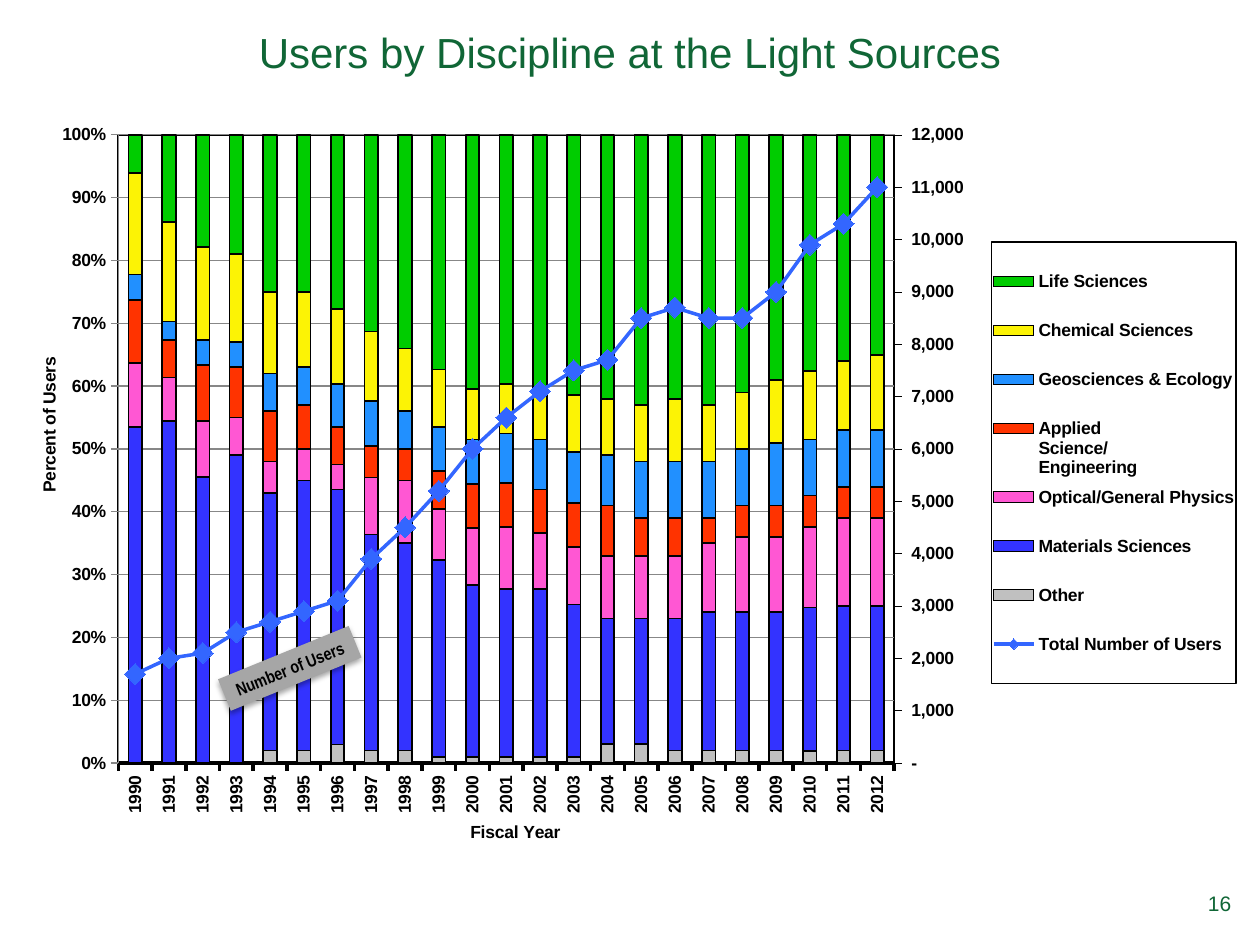
import pptx
import pptx.chart.axis
import pptx.chart.data
import pptx.dml.color
import pptx.enum.chart
import pptx.enum.dml
import pptx.enum.shapes
import pptx.enum.text
import pptx.oxml
import pptx.oxml.ns
import pptx.util

Inches = pptx.util.Inches
Pt = pptx.util.Pt
qn = pptx.oxml.ns.qn
NAMESPACES = pptx.oxml.ns.nsdecls("c", "a")
GREEN, BLACK, BLUE = "106636", "000000", "3366FF"

YEARS = [str(year) for year in range(1990, 2013)]
DISCIPLINES = [
    ("Other", "C0C0C0",
     [0, 0, 0, 0, 2, 2, 3, 2, 2, 1, 1, 1, 1, 1, 3, 3, 2, 2, 2, 2, 2, 2, 2]),
    ("Materials Sciences", "3333FF",
     [53, 55, 46, 49, 41, 43, 41, 34, 33, 31, 27, 27, 27, 24, 20, 20, 21, 22, 22, 22, 23, 23, 23]),
    ("Optical/General Physics", "FF57D3",
     [10, 7, 9, 6, 5, 5, 4, 9, 10, 8, 9, 10, 9, 9, 10, 10, 10, 11, 12, 12, 13, 14, 14]),
    ("Applied Science/Engineering", "FF3300",
     [10, 6, 9, 8, 8, 7, 6, 5, 5, 6, 7, 7, 7, 7, 8, 6, 6, 4, 5, 5, 5, 5, 5]),
    ("Geosciences & Ecology", "2190FF",
     [4, 3, 4, 4, 6, 6, 7, 7, 6, 7, 7, 8, 8, 8, 8, 9, 9, 9, 9, 10, 9, 9, 9]),
    ("Chemical Sciences", "FCF305",
     [16, 16, 15, 14, 13, 12, 12, 11, 10, 9, 8, 8, 8, 9, 9, 9, 10, 9, 9, 10, 11, 11, 12]),
    ("Life Sciences", "00CC00",
     [6, 14, 18, 19, 25, 25, 28, 31, 34, 37, 40, 40, 41, 41, 42, 43, 42, 43, 41, 39, 38, 36, 35]),
]
TOTAL_USERS = [1700, 2000, 2100, 2500, 2700, 2900, 3100, 3900, 4500, 5200, 6000, 6600,
               7100, 7500, 7700, 8500, 8700, 8500, 8500, 9000, 9900, 10300, 11000]


def color(value):
    return pptx.dml.color.RGBColor.from_string(value)


def set_fill(fill, value):
    fill.solid()
    fill.fore_color.rgb = color(value)


def set_line(line, value, width):
    set_fill(line.fill, value)
    line.width = Pt(width)


def set_font(font, size, value, name="Arial", bold=False):
    font.size = Pt(size)
    font.name = name
    font.bold = bold
    font.color.rgb = color(value)


def write_text(text_frame, text, *font_settings):
    paragraph = text_frame.paragraphs[0]
    paragraph.alignment = pptx.enum.text.PP_ALIGN.CENTER
    run = paragraph.add_run()
    run.text = text
    set_font(run.font, *font_settings)


def remove_children(element, tag):
    for child in element.findall(qn(tag)):
        element.remove(child)


def set_layout(element, index, **fractions):
    remove_children(element, "c:layout")
    target = '<c:layoutTarget val="inner"/>' if element.tag == qn("c:plotArea") else ""
    modes = '<c:xMode val="edge"/><c:yMode val="edge"/>'
    sizes = "".join(f'<c:{key} val="{value}"/>' for key, value in fractions.items())
    element.insert(index, pptx.oxml.parse_xml(
        f"<c:layout {NAMESPACES}><c:manualLayout>{target}{modes}{sizes}</c:manualLayout></c:layout>"))


def framed_properties(line_width):
    return pptx.oxml.parse_xml(
        f'<c:spPr {NAMESPACES}><a:solidFill><a:srgbClr val="FFFFFF"/></a:solidFill>'
        f'<a:ln w="{Pt(line_width)}"><a:solidFill><a:srgbClr val="{BLACK}"/></a:solidFill></a:ln></c:spPr>')


def turn_upright(body):
    body.set("rot", "-5400000")
    body.set("vert", "horz")


def format_axis(axis, line_width):
    axis.major_tick_mark = pptx.enum.chart.XL_TICK_MARK.OUTSIDE
    axis.minor_tick_mark = pptx.enum.chart.XL_TICK_MARK.NONE
    set_line(axis.format.line, BLACK, line_width)
    set_font(axis.tick_labels.font, 10, BLACK, "Arial", True)


def scale_axis(axis, maximum, step, number_format):
    axis.minimum_scale, axis.maximum_scale, axis.major_unit = 0, maximum, step
    axis.tick_labels.number_format = number_format
    axis.tick_labels.number_format_is_linked = False


def add_axis_title(axis, text, x, y):
    title = axis.axis_title
    write_text(title.text_frame, text, 10, BLACK, "Arial", True)
    set_layout(title._element, 1, x=x, y=y)
    return title


def move_total_to_right_axis(chart):
    plot_area = chart._chartSpace.chart.plotArea
    bars = plot_area.find(qn("c:barChart"))
    total = bars.findall(qn("c:ser"))[-1]
    remove_children(total, "c:invertIfNegative")
    line_chart = pptx.oxml.parse_xml(
        f'<c:lineChart {NAMESPACES}><c:grouping val="standard"/><c:varyColors val="0"/>'
        '<c:marker val="1"/><c:axId val="5001"/><c:axId val="5002"/></c:lineChart>')
    line_chart.insert(2, total)
    bars.addnext(line_chart)

    def axis_xml(tag, number, other, deleted, position, crosses):
        return pptx.oxml.parse_xml(
            f'<c:{tag} {NAMESPACES}><c:axId val="{number}"/>'
            '<c:scaling><c:orientation val="minMax"/></c:scaling>'
            f'<c:delete val="{deleted}"/><c:axPos val="{position}"/>'
            '<c:tickLblPos val="nextTo"/>'
            f'<c:crossAx val="{other}"/><c:crosses val="{crosses}"/></c:{tag}>')

    right_axis = axis_xml("valAx", 5002, 5001, 0, "r", "max")
    plot_area.findall(qn("c:valAx"))[-1].addnext(right_axis)
    right_axis.addnext(axis_xml("catAx", 5001, 5002, 1, "b", "autoZero"))
    return pptx.chart.axis.ValueAxis(right_axis)


def add_users_chart(slide, left, top, width, height):
    data = pptx.chart.data.CategoryChartData()
    data.categories = YEARS
    for name, _, values in DISCIPLINES:
        data.add_series(name, values)
    data.add_series("Total Number of Users", TOTAL_USERS)
    chart = slide.shapes.add_chart(
        pptx.enum.chart.XL_CHART_TYPE.COLUMN_STACKED_100, left, top, width, height, data).chart
    chart.has_title = False
    set_font(chart.font, 10, BLACK, "Arial", True)

    right_axis = move_total_to_right_axis(chart)
    bars, lines = chart.plots
    bars.gap_width, bars.overlap, bars.vary_by_categories = 150, 100, False
    for series, (_, fill, _) in zip(bars.series, DISCIPLINES):
        set_fill(series.format.fill, fill)
        set_line(series.format.line, BLACK, 1)
    total = lines.series[0]
    total.smooth = False
    set_line(total.format.line, BLUE, 2)
    total.marker.style = pptx.enum.chart.XL_MARKER_STYLE.DIAMOND
    total.marker.size = 12
    set_fill(total.marker.format.fill, BLUE)
    set_line(total.marker.format.line, BLUE, 0.75)

    year_axis, percent_axis = chart.category_axis, chart.value_axis
    for axis, line_width in ((year_axis, 2), (percent_axis, 0.25), (right_axis, 0.25)):
        format_axis(axis, line_width)
    scale_axis(percent_axis, 1, 0.1, "0%")
    scale_axis(right_axis, 12000, 1000, '_(* #,##0_);_(* \\(#,##0\\);_(* "-"??_)')
    turn_upright(year_axis._element.find(qn("c:txPr")).find(qn("a:bodyPr")))
    grid = percent_axis.major_gridlines.format.line
    set_line(grid, BLACK, 0.25)
    grid.dash_style = pptx.enum.dml.MSO_LINE.SQUARE_DOT
    add_axis_title(year_axis, "Fiscal Year", 0.38, 0.87)
    percent_title = add_axis_title(percent_axis, "Percent of Users", 0.06, 0.3)
    turn_upright(percent_title.text_frame._txBody.find(qn("a:bodyPr")))

    plot_area = chart._chartSpace.chart.plotArea
    set_layout(plot_area, 0, x=0.122, y=0.031, w=0.574, h=0.772)
    plot_area.append(framed_properties(1))
    chart.has_legend = True
    legend = chart.legend
    legend.position = pptx.enum.chart.XL_LEGEND_POSITION.RIGHT
    legend.include_in_layout = False
    set_font(legend.font, 10, BLACK, "Arial", True)
    set_layout(legend._element, 1, x=0.768, y=0.163, w=0.181, h=0.542)
    legend._element.find(qn("c:txPr")).addprevious(framed_properties(1))


def add_title(slide, left, top, width, height):
    title = slide.shapes.title
    title.left, title.top, title.width, title.height = left, top, width, height
    title.text_frame.vertical_anchor = pptx.enum.text.MSO_ANCHOR.MIDDLE
    write_text(title.text_frame, "Users by Discipline at the Light Sources", 24, GREEN)


def add_line_label(slide, left, top, width, height):
    label = slide.shapes.add_shape(
        pptx.enum.shapes.MSO_SHAPE.RECTANGLE, left, top, width, height)
    label.rotation = 337.8
    set_fill(label.fill, "A6A6A6")
    label.line.fill.background()
    label._element.spPr.append(pptx.oxml.parse_xml(
        f'<a:effectLst {NAMESPACES}><a:outerShdw blurRad="{Pt(3.1)}" dist="{Pt(1.8)}" dir="5400000">'
        f'<a:srgbClr val="{BLACK}"><a:alpha val="35000"/></a:srgbClr></a:outerShdw></a:effectLst>'))
    label.text_frame.word_wrap = False
    label.text_frame.auto_size = pptx.enum.text.MSO_AUTO_SIZE.SHAPE_TO_FIT_TEXT
    write_text(label.text_frame, "Number of Users", 10, BLACK, "Arial Narrow", True)


def add_page_number(slide, left, top, width, height):
    text_frame = slide.shapes.add_textbox(left, top, width, height).text_frame
    text_frame.word_wrap = True
    text_frame.vertical_anchor = pptx.enum.text.MSO_ANCHOR.MIDDLE
    write_text(text_frame, "16", 12, GREEN)


def main():
    presentation = pptx.Presentation()
    presentation.slide_width, presentation.slide_height = Inches(10), Inches(7.5)
    slide = presentation.slides.add_slide(presentation.slide_layouts[5])
    add_users_chart(slide, Inches(-0.37), Inches(0.87), Inches(10.73), Inches(6.46))
    add_title(slide, Inches(0), Inches(0.16), Inches(10), Inches(0.5))
    add_line_label(slide, Inches(1.74), Inches(5.17), Inches(1.12), Inches(0.27))
    add_page_number(slide, Inches(9.48), Inches(6.97), Inches(0.4), Inches(0.4))
    presentation.save("out.pptx")


if __name__ == "__main__":
    main()
